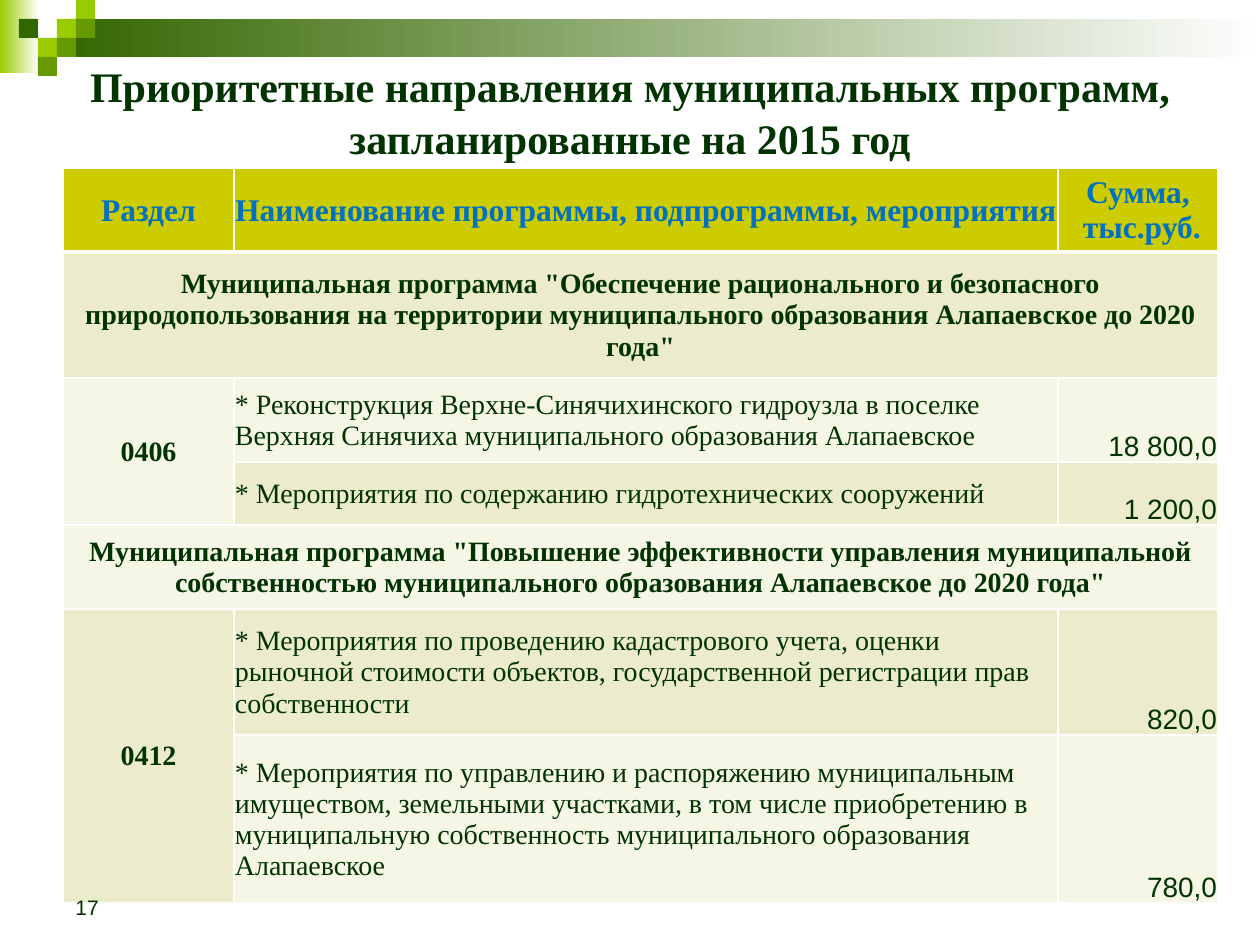
from dataclasses import dataclass
from lxml.etree import fromstring
from pptx import Presentation
from pptx.dml.color import RGBColor as Rgb
from pptx.enum.shapes import MSO_SHAPE as Shape
from pptx.enum.text import MSO_ANCHOR as Anchor, MSO_AUTO_SIZE as Fit, PP_ALIGN as Align
from pptx.util import Pt


@dataclass(frozen=True)
class Theme:
    ink: str = "003300"
    blue: str = "0070C0"
    olive: str = "CCCC00"
    dark: str = "336600"
    green: str = "669900"
    lime: str = "99CC00"
    white: str = "FFFFFF"
    bands: tuple = ("F6F6E7", "ECECCC")
    serif: str = "Times New Roman"
    sans: str = "Arial"
    title: int = 24
    head: int = 18
    body: int = 16
    page: int = 12


look = Theme()


def px(n):
    return round(n * 914400 / 126)


def write(frame, text, size, font, color, bold=False, align=Align.LEFT):
    for i, line in enumerate(text.split("\n")):
        para = frame.paragraphs[0] if i == 0 else frame.add_paragraph()
        para.alignment = align
        run = para.add_run()
        run.text = line
        run.font.size, run.font.name, run.font.bold = Pt(size), font, bold
        run.font.color.rgb = Rgb.from_string(color)


deck = Presentation()
deck.slide_width, deck.slide_height = px(1260), px(945)
slide = deck.slides.add_slide(deck.slide_layouts[5])
shapes = slide.shapes

# Corner ornament: two fading bars, then squares on a grid
unit = 19
parts = [
    (0, 0, 39, 73, look.lime, True),
    (3 * unit, unit, 1203, 2 * unit, look.dark, True),
]
for col, row, color in [
    (3, 1, look.lime), (4, 0, look.lime), (4, 1, look.green), (2, 2, look.lime),
    (1, 1, look.dark), (3, 2, look.green), (2, 3, look.green),
]:
    parts.append((col * unit, row * unit, unit, unit, color, False))

for x, y, w, h, color, fade in parts:
    box = shapes.add_shape(Shape.RECTANGLE, px(x), px(y), px(w), px(h))
    box.shadow.inherit = False
    box.line.fill.background()
    if fade:
        box.fill.gradient()
        box.fill.gradient_angle = 0
        for stop, tone in zip(box.fill.gradient_stops, (color, look.white)):
            stop.color.rgb = Rgb.from_string(tone)
    else:
        box.fill.solid()
        box.fill.fore_color.rgb = Rgb.from_string(color)

# Title
title = shapes.title
title.left, title.top, title.width, title.height = px(63), px(63), px(1134), px(95)
frame = title.text_frame
frame.auto_size, frame.word_wrap = Fit.NONE, True
frame.vertical_anchor = Anchor.MIDDLE
write(frame, "Приоритетные направления муниципальных программ, запланированные на 2015 год",
      look.title, look.serif, look.ink, True, Align.CENTER)
frame.paragraphs[0].line_spacing = 1.05

# Programme table
rows = [
    ("Раздел", "Наименование программы, подпрограммы, мероприятия", "Сумма,\n тыс.руб."),
    ('Муниципальная программа "Обеспечение рационального и безопасного природопользования '
     'на территории муниципального образования Алапаевское до 2020 года"', "", ""),
    ("0406", "* Реконструкция Верхне-Синячихинского гидроузла в поселке Верхняя Синячиха "
     "муниципального образования Алапаевское", "18 800,0"),
    ("", "* Мероприятия по содержанию гидротехнических сооружений", "1 200,0"),
    ('Муниципальная программа "Повышение эффективности управления муниципальной '
     'собственностью муниципального образования Алапаевское до 2020 года"', "", ""),
    ("0412", "* Мероприятия по проведению кадастрового учета, оценки рыночной стоимости "
     "объектов, государственной регистрации прав собственности", "820,0"),
    ("", "* Мероприятия по управлению и распоряжению муниципальным имуществом, земельными "
     "участками, в том числе приобретению в муниципальную собственность муниципального "
     "образования Алапаевское", "780,0"),
]
wide = [171, 824, 160]
high = [84, 126, 84, 63, 84, 126, 168]
table = shapes.add_table(len(rows), len(wide), px(63), px(168),
                         px(sum(wide)), px(sum(high))).table
for col, w in zip(table.columns, wide):
    col.width = px(w)
for row, h in zip(table.rows, high):
    row.height = px(h)
for r in (1, 4):
    table.cell(r, 0).merge(table.cell(r, 2))
for r in (2, 5):
    table.cell(r, 0).merge(table.cell(r + 1, 0))

space = "http://schemas.openxmlformats.org/drawingml/2006/main"
for r, row in enumerate(rows):
    for c, text in enumerate(row):
        cell = table.cell(r, c)
        head = r == 0
        cell.fill.solid()
        cell.fill.fore_color.rgb = Rgb.from_string(look.olive if head else look.bands[r % 2])
        cell.margin_left = cell.margin_right = cell.margin_top = px(1)
        cell.margin_bottom = 0
        money = c == 2 and not head
        cell.vertical_anchor = Anchor.BOTTOM if money else Anchor.MIDDLE
        if text:
            align = Align.RIGHT if money else Align.CENTER if head or c == 0 else Align.LEFT
            write(cell.text_frame, text, look.head if head else look.body,
                  look.sans if money else look.serif, look.blue if head else look.ink,
                  head or c == 0, align)
        # White rules, thicker under the header
        props = cell._tc.get_or_add_tcPr()
        for i, side in enumerate("LRTB"):
            thick = 3 if (r, side) in ((0, "B"), (1, "T")) else 1
            props.insert(i, fromstring(
                f'<a:ln{side} xmlns:a="{space}" w="{Pt(thick)}"><a:solidFill>'
                f'<a:srgbClr val="{look.white}"/></a:solidFill></a:ln{side}>'))

# Page number
page = shapes.add_textbox(px(63), px(861), px(294), px(65)).text_frame
page.word_wrap = True
page.vertical_anchor = Anchor.BOTTOM
write(page, "17", look.page, look.sans, look.ink)

deck.save("out.pptx")
